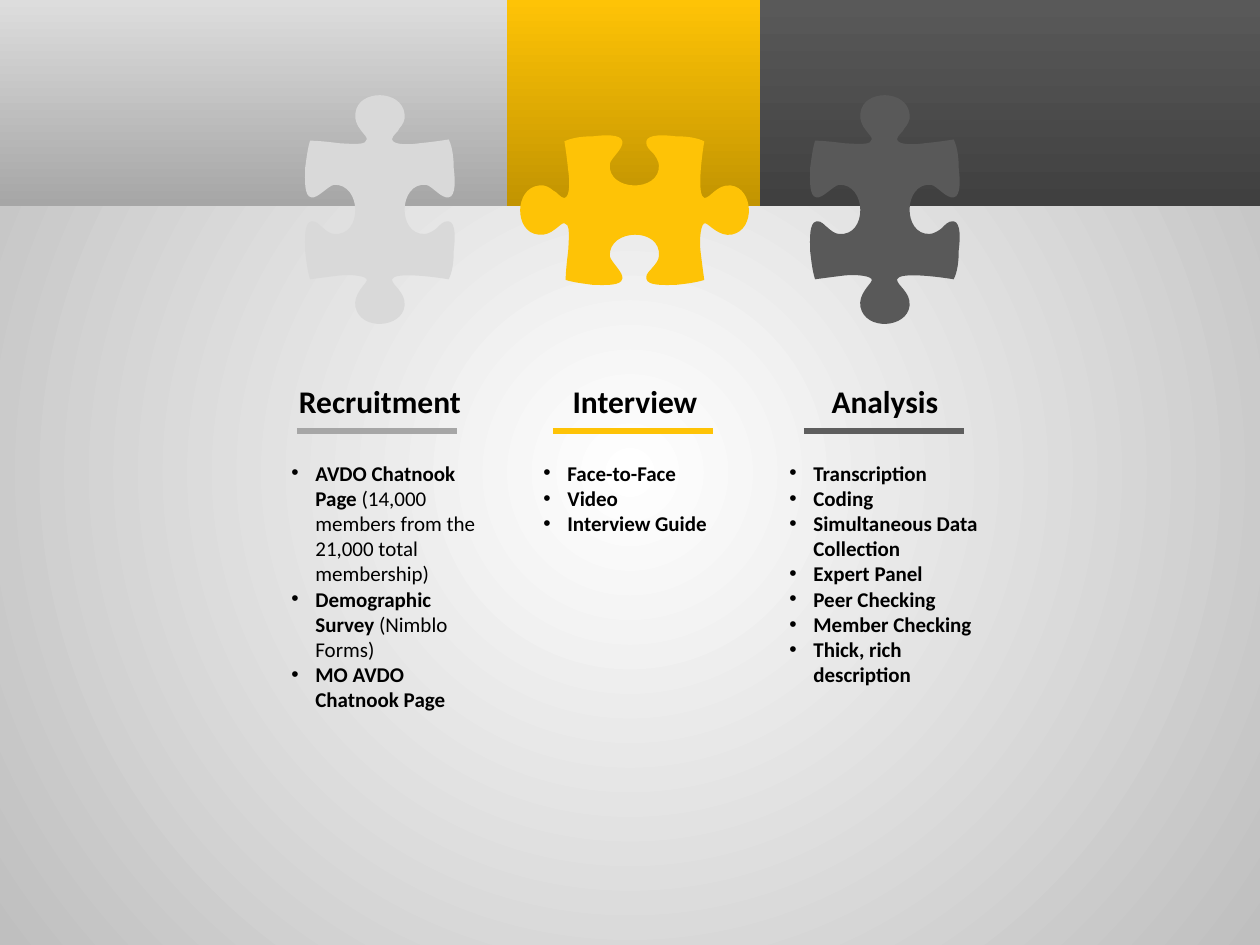
from lxml import etree
from pptx import Presentation
from pptx.dml.color import RGBColor
from pptx.enum.shapes import MSO_CONNECTOR, MSO_SHAPE
from pptx.enum.text import MSO_AUTO_SIZE, PP_ALIGN
from pptx.oxml.ns import qn
from pptx.util import Pt

STRAIGHT = MSO_CONNECTOR.STRAIGHT
RECTANGLE = MSO_SHAPE.RECTANGLE
FIT_SHAPE = MSO_AUTO_SIZE.SHAPE_TO_FIT_TEXT
CENTER = PP_ALIGN.CENTER

PX = 914400 // 126
HUNDREDTH_INCH = 9144
FONT = "Calibri"
COLORS = {
    "white": "FFFFFF", "edge": "BFBFBF", "text": "000000",
    "light top": "DDDDDD", "light": "D9D9D9", "light end": "A6A6A6",
    "gold": "FEC306", "gold end": "C29401",
    "dark": "595959", "dark end": "404040", "dark rule": "5E5E5E",
}

COLUMNS = [
    {
        "title": "Recruitment",
        "bullets": [
            ("AVDO Chatnook Page ", "(14,000 members from the 21,000 total membership)"),
            ("Demographic Survey ", "(Nimblo Forms)"),
            ("MO AVDO Chatnook Page", ""),
        ],
        "band": (0, 507, "light top", "light end"),
        "piece": (380, 90, "light"),
        "heading left": 286, "rule": (297, "light end"), "list": (279, 292),
    },
    {
        "title": "Interview",
        "bullets": [("Face-to-Face", ""), ("Video", ""), ("Interview Guide", "")],
        "band": (507, 760, "gold", "gold end"),
        "piece": (635, 0, "gold"),
        "heading left": 541, "rule": (553, "gold"), "list": (531, 115),
    },
    {
        "title": "Analysis",
        "bullets": [
            ("Transcription", ""), ("Coding", ""),
            ("Simultaneous Data Collection", ""), ("Expert Panel", ""),
            ("Peer Checking", ""), ("Member Checking", ""),
            ("Thick, rich description", ""),
        ],
        "band": (760, 1260, "dark", "dark end"),
        "piece": (885, 90, "dark"),
        "heading left": 791, "rule": (804, "dark rule"), "list": (777, 267),
    },
]

PIECE_START = (559, 112)
PIECE_CURVES = [
    (557, 124), (553, 155), (559, 157), (564, 157), (569, 146), (580, 147),
    (598, 149), (600, 182), (581, 186), (571, 188), (563, 178), (560, 177),
    (556, 176), (555, 191), (556, 199), (557, 207), (558, 215), (559, 222),
    (553, 224), (545, 225), (536, 226), (528, 226), (514, 227), (513, 221),
    (512, 217), (517, 214), (518, 212), (520, 210), (523, 206), (523, 203),
    (525, 180), (483, 181), (484, 203), (485, 208), (495, 216), (494, 221),
    (493, 227), (480, 226), (471, 226), (464, 225), (455, 224), (449, 222),
    (449, 216), (450, 207), (451, 199), (452, 183), (452, 178), (448, 177),
    (445, 176), (438, 188), (427, 186), (408, 184), (408, 149), (428, 147),
    (432, 146), (437, 149), (439, 151), (442, 152), (445, 157), (448, 157),
    (453, 156), (452, 141), (451, 135), (450, 125), (449, 118), (448, 112),
    (454, 109), (463, 108), (471, 108), (479, 107), (493, 106), (494, 112),
    (495, 118), (485, 125), (484, 130), (482, 152), (524, 153), (523, 131),
    (523, 128), (520, 123), (518, 121), (517, 120), (512, 116), (513, 112),
    (514, 106), (528, 107), (536, 108), (545, 108), (553, 109), (559, 112),
]

BAND_HEIGHT = 206
PIECE_MIDDLE = 210
HEADING_TOP, HEADING_WIDTH, HEADING_HEIGHT = 376, 188, 51
RULE_TOP, RULE_WIDTH = 431, 160
LIST_TOP, LIST_WIDTH = 454, 218
BULLET_INDENT = 24


def color(name):
    return RGBColor.from_string(COLORS[name])


def fill_gradient(fill, names):
    fill.gradient()
    fill.gradient_angle = 270
    for stop, name in zip(fill.gradient_stops, names):
        stop.color.rgb = color(name)


def paint_background(page):
    fill_gradient(page.background.fill, ("white", "edge"))
    linear = page.element.find(".//" + qn("a:lin"))
    radial = etree.Element(qn("a:path"), {"path": "circle"})
    middle = {side: "50000" for side in "ltrb"}
    etree.SubElement(radial, qn("a:fillToRect"), middle)
    linear.getparent().replace(linear, radial)


def add_band(page, left, right, *names):
    band = page.shapes.add_shape(
        RECTANGLE, left * PX, 0, (right - left) * PX, BAND_HEIGHT * PX)
    band.shadow.inherit = False
    band.line.fill.background()
    fill_gradient(band.fill, names)


def add_piece(page, center, rotation, name):
    builder = page.shapes.build_freeform(*PIECE_START, scale=HUNDREDTH_INCH)
    builder.add_line_segments(PIECE_CURVES, close=True)
    piece = builder.convert_to_shape()
    segments = list(piece.element.iter(qn("a:lnTo")))
    for first in range(0, len(PIECE_CURVES), 3):
        curve = etree.Element(qn("a:cubicBezTo"))
        segments[first].addprevious(curve)
        for segment in segments[first:first + 3]:
            curve.append(segment[0])
            segment.getparent().remove(segment)
    piece.left = center * PX - piece.width // 2
    piece.top = PIECE_MIDDLE * PX - piece.height // 2
    piece.rotation = rotation
    piece.shadow.inherit = False
    piece.fill.solid()
    piece.fill.fore_color.rgb = color(name)
    piece.line.fill.background()


def add_rule(page, left, name):
    rule = page.shapes.add_connector(
        STRAIGHT, left * PX, RULE_TOP * PX,
        (left + RULE_WIDTH) * PX, RULE_TOP * PX)
    rule.line.color.rgb = color(name)
    rule.line.width = Pt(3)
    etree.SubElement(rule.element.spPr, qn("a:effectLst"))


def add_text_frame(page, *frame):
    box = page.shapes.add_textbox(*(length * PX for length in frame))
    box.text_frame.word_wrap = True
    box.text_frame.auto_size = FIT_SHAPE
    return box.text_frame


def add_span(para, text, size, bold):
    span = para.add_run()
    span.text = text
    for key, value in {"name": FONT, "size": Pt(size), "bold": bold}.items():
        setattr(span.font, key, value)
    span.font.color.rgb = color("text")


def add_heading(page, left, title):
    frame = add_text_frame(page, left, HEADING_TOP, HEADING_WIDTH, HEADING_HEIGHT)
    para = frame.paragraphs[0]
    para.alignment = CENTER
    add_span(para, title, 18, True)


def add_list(page, left, height, bullets):
    frame = add_text_frame(page, left, LIST_TOP, LIST_WIDTH, height)
    for index, (strong, plain) in enumerate(bullets):
        para = frame.add_paragraph() if index else frame.paragraphs[0]
        properties = para._p.get_or_add_pPr()
        properties.set("marL", str(BULLET_INDENT * PX))
        properties.set("indent", str(-BULLET_INDENT * PX))
        etree.SubElement(properties, qn("a:buFont"), {"typeface": "Arial"})
        etree.SubElement(properties, qn("a:buChar"), {"char": "•"})
        add_span(para, strong, 12, True)
        if plain:
            add_span(para, plain, 12, False)


def main():
    deck = Presentation()
    deck.slide_width, deck.slide_height = 1260 * PX, 945 * PX
    page = deck.slides.add_slide(deck.slide_layouts[6])
    paint_background(page)
    for column in COLUMNS:
        add_band(page, *column["band"])
    for column in COLUMNS:
        add_piece(page, *column["piece"])
        add_heading(page, column["heading left"], column["title"])
        add_rule(page, *column["rule"])
        add_list(page, *column["list"], column["bullets"])
    deck.save("out.pptx")


if __name__ == "__main__":
    main()
